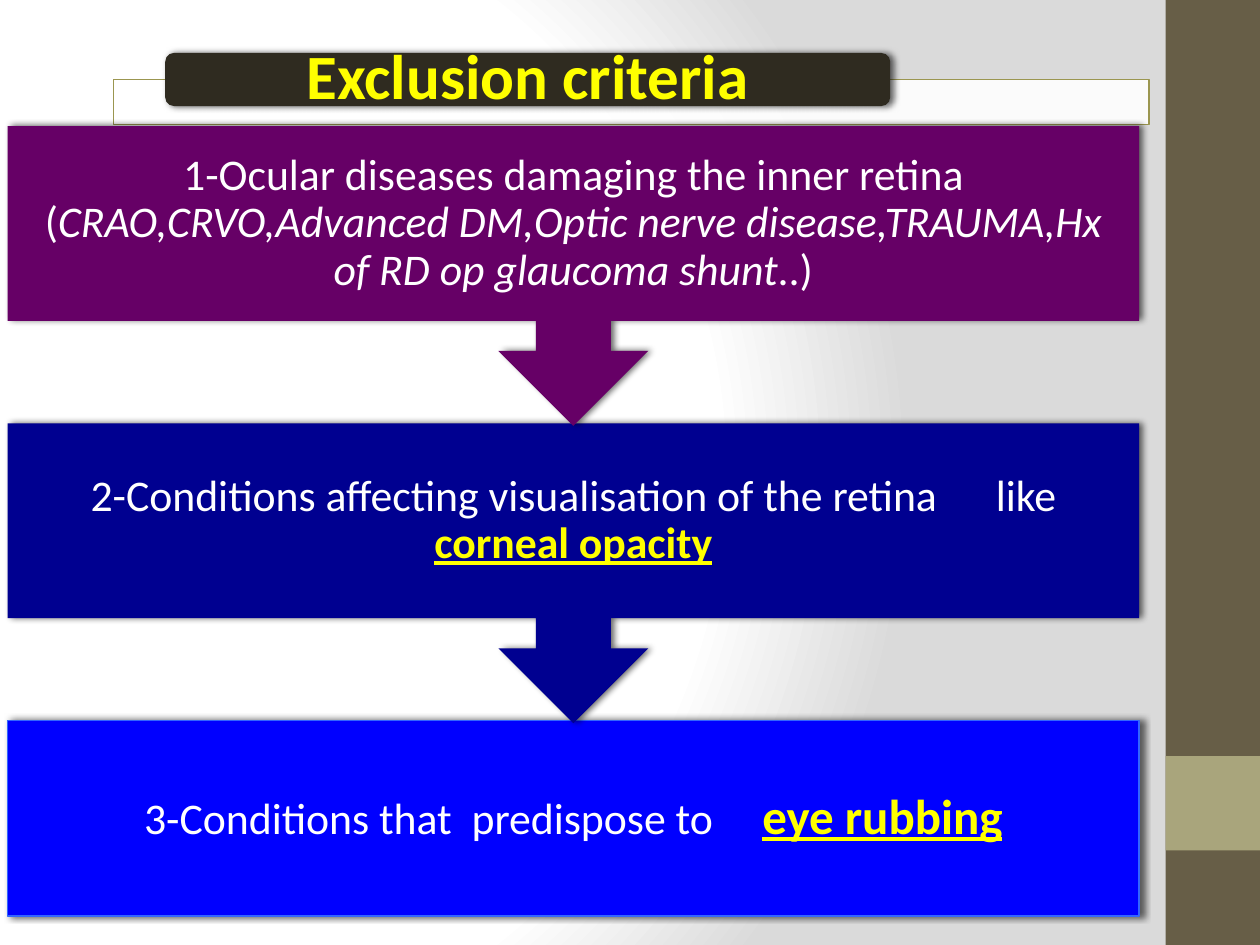
from dataclasses import dataclass

from lxml import etree
from pptx import Presentation
from pptx import util as u
from pptx.dml.color import RGBColor
from pptx.enum import shapes, text
from pptx.oxml import ns, parse_xml

WHITE = RGBColor(0xFF, 0xFF, 0xFF)
YELLOW = RGBColor(0xFF, 0xFF, 0x00)
BROWN = RGBColor(0x67, 0x5E, 0x47)
SAGE = RGBColor(0xA9, 0xA5, 0x7C)
OLIVE = RGBColor(0x9B, 0x96, 0x50)
DARK = RGBColor(0x2F, 0x2B, 0x20)
PURPLE = RGBColor(0x66, 0x00, 0x66)
NAVY = RGBColor(0x00, 0x00, 0x90)
BLUE = RGBColor(0x00, 0x00, 0xFF)
EDGE = RGBColor(0x33, 0x66, 0xFF)
GREY = RGBColor(0xDA, 0xDA, 0xDA)

KEYWORD = {"color": YELLOW, "bold": True, "underline": True}
CRITERIA = [
    (PURPLE, [
        ("1-Ocular diseases damaging the inner retina (", {}),
        ("CRAO,CRVO,Advanced DM,Optic nerve disease,TRAUMA,Hx of RD op glaucoma shunt",
         {"italic": True}),
        ("..)", {}),
    ]),
    (NAVY, [
        ("2-Conditions affecting visualisation of the retina", {}),
        (" ", {"gap": 28}),
        ("like ", {}),
        ("corneal opacity", KEYWORD),
    ]),
    (BLUE, [
        ("3-Conditions that", {}),
        (" ", {"gap": 5.7}),
        ("predispose to", {}),
        (" ", {"gap": 22.6}),
        ("eye rubbing", {**KEYWORD, "size": 28}),
    ]),
]


@dataclass
class Box:
    """A rectangle that can be cut up by shares of its size."""
    left: float
    top: float
    width: float
    height: float

    def inner(self, left, top, width, height):
        """Return the inner box at the given shares."""
        return Box(self.left + left * self.width, self.top + top * self.height,
                   width * self.width, height * self.height)

    def lengths(self):
        """Return left, top, width and height as whole EMU."""
        return [u.Emu(round(v)) for v in (self.left, self.top, self.width, self.height)]


def add_block(page, kind, box, fill, line=None, weight=1, shadow=False):
    """Add a filled preset shape, with a soft shadow on request."""
    shape = page.shapes.add_shape(kind, *box.lengths())
    shape.fill.solid()
    shape.fill.fore_color.rgb = fill
    if line is None:
        shape.line.fill.background()
    else:
        shape.line.color.rgb = line
        shape.line.width = u.Pt(weight)
    shape.shadow.inherit = False
    if shadow:
        effects = shape._element.spPr.find(ns.qn("a:effectLst"))
        outer = etree.SubElement(effects, ns.qn("a:outerShdw"), blurRad=str(u.Pt(4)),
                                 dist=str(u.Pt(2)), dir="0", rotWithShape="0")
        set_alpha(etree.SubElement(outer, ns.qn("a:srgbClr"), val="000000"), 60)
    return shape


def set_alpha(color, percent):
    """Give a colour element an opacity."""
    etree.SubElement(color, ns.qn("a:alpha"), val=str(percent * 1000))


def write(shape, spans, size, side, edge):
    """Write one centred paragraph of styled spans into a shape."""
    frame = shape.text_frame
    frame.word_wrap = True
    frame.vertical_anchor = text.MSO_ANCHOR.MIDDLE
    frame.margin_left = frame.margin_right = u.Inches(side)
    frame.margin_top = frame.margin_bottom = u.Inches(edge)
    para = frame.paragraphs[0]
    para.alignment = text.PP_ALIGN.CENTER
    para.line_spacing = 0.9
    para.font.name = "Calibri"
    for words, style in spans:
        span = para.add_run()
        span.text = words
        span.font.size = u.Pt(style.get("size", size))
        span.font.color.rgb = style.get("color", WHITE)
        span.font.bold = style.get("bold")
        span.font.italic = style.get("italic")
        span.font.underline = style.get("underline")
        if "gap" in style:
            span.font._element.set("spc", str(round(style["gap"] * 100)))


def paint_background(page):
    """Fill the page with a circular white to grey gradient."""
    stops = "".join(f'<a:gs pos="{pos * 1000}"><a:srgbClr val="{color}"/></a:gs>'
                    for pos, color in ((0, WHITE), (75, WHITE), (100, GREY)))
    page._element.cSld.insert(0, parse_xml(
        f'<p:bg {ns.nsdecls("p", "a")}><p:bgPr><a:gradFill rotWithShape="1">'
        f'<a:gsLst>{stops}</a:gsLst><a:path path="circle">'
        '<a:fillToRect l="20000" t="50000" r="100000" b="50000"/></a:path>'
        '</a:gradFill><a:effectLst/></p:bgPr></p:bg>'))


def add_sidebar(page, box):
    """Draw the side band with its lighter square."""
    rectangle = shapes.MSO_SHAPE.RECTANGLE
    add_block(page, rectangle, box, BROWN)
    add_block(page, rectangle, box.inner(0, 0.8, 1, 0.1), SAGE)


def add_title(page, box):
    """Draw the title plate over its outlined strip."""
    strip = add_block(page, shapes.MSO_SHAPE.RECTANGLE, box.inner(0, 0.37, 1, 0.63),
                      WHITE, OLIVE)
    set_alpha(strip._element.spPr.find(ns.qn("a:solidFill"))[0], 90)
    plate = add_block(page, shapes.MSO_SHAPE.ROUNDED_RECTANGLE,
                      box.inner(0.05, 0, 0.7, 0.74), DARK, shadow=True)
    write(plate, [("Exclusion criteria", {"color": YELLOW, "bold": True})], 36, 0.22, 0)


def add_flow(page, box, criteria):
    """Stack the criteria from last to first, each pointing at the next."""
    pitch, body, callout = 0.3764, 0.2472, 0.3796
    last = len(criteria) - 1
    for row in range(last, -1, -1):
        fill, spans = criteria[row]
        panel = box.inner(0, row * pitch, 1, body)
        if row == last:
            holder = add_block(page, shapes.MSO_SHAPE.RECTANGLE, panel, fill, EDGE,
                               0.75, shadow=True)
        else:
            arrow = add_block(page, shapes.MSO_SHAPE.UP_ARROW_CALLOUT,
                              box.inner(0, row * pitch, 1, callout), fill, shadow=True)
            arrow.rotation = 180
            holder = page.shapes.add_textbox(*panel.lengths())
        write(holder, spans, 25, 0.19, 0.19)


def main():
    """Build the deck and save it."""
    deck = Presentation()
    deck.slide_width, deck.slide_height = u.Inches(10), u.Inches(7.5)
    page = deck.slides.add_slide(deck.slide_layouts[6])
    whole = Box(0, 0, deck.slide_width, deck.slide_height)
    paint_background(page)
    add_sidebar(page, whole.inner(0.925, 0, 0.075, 1))
    add_title(page, whole.inner(0.09, 0.056, 0.822, 0.076))
    add_flow(page, whole.inner(0.006, 0.1333, 0.898, 0.836), CRITERIA)
    deck.save("out.pptx")


if __name__ == "__main__":
    main()
